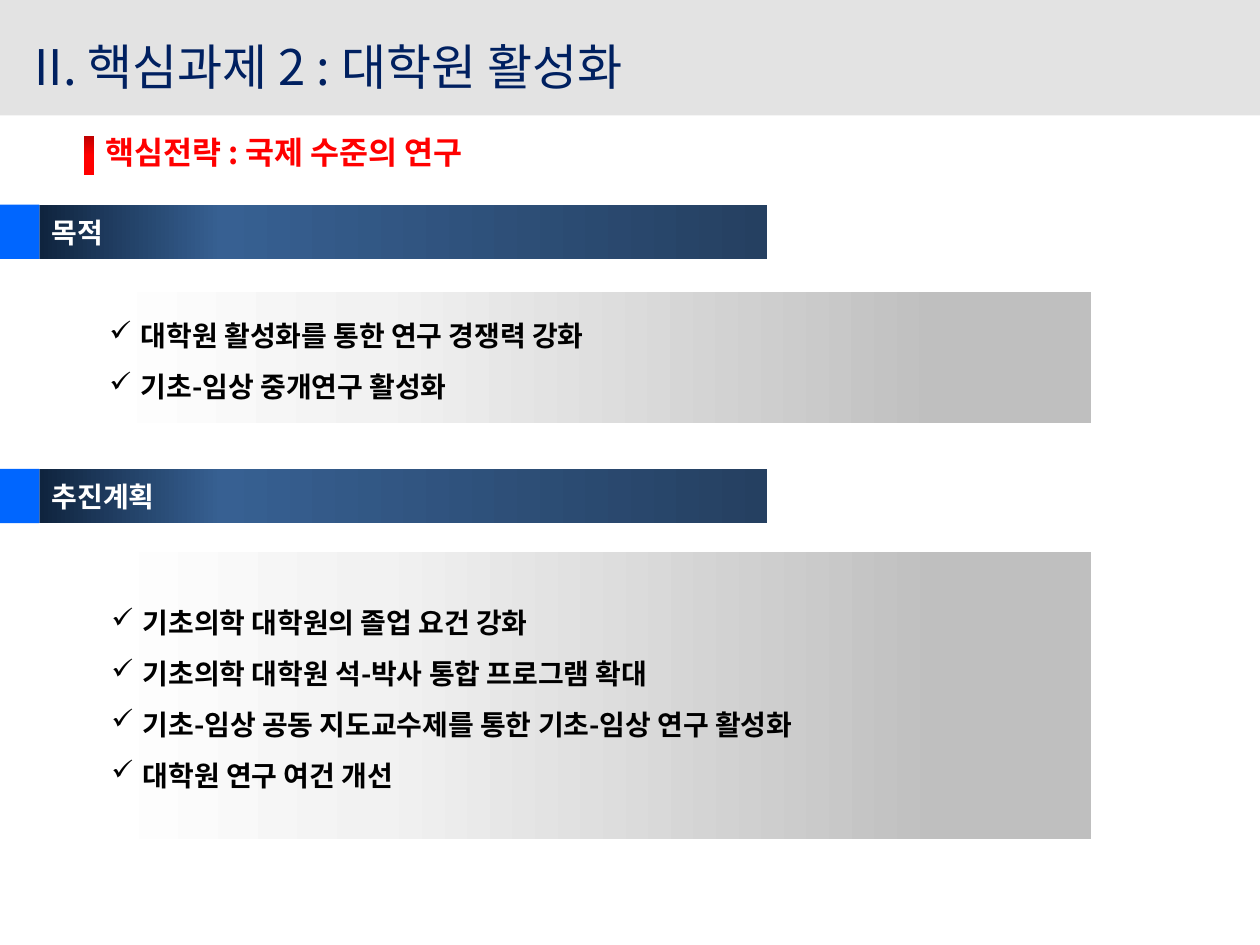
import pptx
import pptx.util
import pptx.dml.color
import pptx.enum.shapes
import pptx.enum.text
import pptx.oxml
import pptx.oxml.ns
from lxml import etree

Pt = pptx.util.Pt
RGB = pptx.dml.color.RGBColor
ALIGN = pptx.enum.text.PP_ALIGN
ANCHOR = pptx.enum.text.MSO_ANCHOR
qn = pptx.oxml.ns.qn

TITLE = "II. 핵심과제 2 : 대학원 활성화"
LEAD = "핵심전략 : 국제 수준의 연구"
# heading, heading top, panel (left, top, width, height), items
PARTS = [
    ("목적", 117, (55.5, 167, 568, 75), [
        "대학원 활성화를 통한 연구 경쟁력 강화",
        "기초-임상 중개연구 활성화",
    ]),
    ("추진계획", 268, (56.5, 315.5, 567, 164), [
        "기초의학 대학원의 졸업 요건 강화",
        "기초의학 대학원 석-박사 통합 프로그램 확대",
        "기초-임상 공동 지도교수제를 통한 기초-임상 연구 활성화",
        "대학원 연구 여건 개선",
    ]),
]

FONT = "Noto Sans CJK KR"
NAVY = RGB(0x00, 0x20, 0x60)
RED = RGB(0xFF, 0x00, 0x00)
BLUE = RGB(0x00, 0x66, 0xFF)
BLACK = RGB(0x00, 0x00, 0x00)
WHITE = RGB(0xFF, 0xFF, 0xFF)
SILVER = RGB(0xDD, 0xDD, 0xDD)
# gradient stops: percent, colour
GREYS = [(0, WHITE), (28, RGB(0xF2, 0xF2, 0xF2)), (85, RGB(0xBF, 0xBF, 0xBF))]
BLUES = [(0, RGB(0x0F, 0x24, 0x3E)), (25, RGB(0x37, 0x60, 0x92)),
         (100, RGB(0x25, 0x40, 0x61))]
REDS = [(0, RGB(0xC0, 0x00, 0x00)), (50, RED), (100, RED)]

TAB_W, HEAD_W, HEAD_H = 22.5, 416, 31
INDENT = 18


def add_rect(slide, box, color=None):
    shape = slide.shapes.add_shape(
        pptx.enum.shapes.MSO_SHAPE.RECTANGLE, *map(Pt, box))
    shape.shadow.inherit = False
    shape.line.fill.background()
    if color is not None:
        shape.fill.solid()
        shape.fill.fore_color.rgb = color
    return shape


def shade(shape, stops, angle=0):
    """Fill with a gradient; angle runs counter-clockwise."""
    shape.fill.gradient()
    shape.fill.gradient_angle = angle
    group = shape._element.spPr.find(qn("a:gradFill")).find(qn("a:gsLst"))
    for old in list(group):
        group.remove(old)
    for spot, color in stops:
        stop = etree.SubElement(group, qn("a:gs"), pos=str(spot * 1000))
        etree.SubElement(stop, qn("a:srgbClr"), val=str(color))


def add_run(para, text, size, color, bold=True):
    para.alignment = ALIGN.LEFT
    run = para.add_run()
    run.text = text
    font = run.font
    font.name, font.size, font.bold = FONT, Pt(size), bold
    font.color.rgb = color
    etree.SubElement(run._r.get_or_add_rPr(), qn("a:ea"), typeface=FONT)


def add_check(para):
    props = para._p.get_or_add_pPr()
    props.set("marL", str(Pt(INDENT)))
    props.set("indent", str(-Pt(INDENT)))
    etree.SubElement(props, qn("a:buChar"), char="✓")


def add_list(shape, items):
    frame = shape.text_frame
    frame.word_wrap = True
    frame.vertical_anchor = ANCHOR.MIDDLE
    for i, item in enumerate(items):
        para = frame.add_paragraph() if i else frame.paragraphs[0]
        para.line_spacing = 1.2
        para.space_after = Pt(6)
        add_check(para)
        add_run(para, item, 16, BLACK)


def add_head(slide, text, top):
    bar = add_rect(slide, (TAB_W, top, HEAD_W, HEAD_H))
    shade(bar, BLUES)
    bar.text_frame.vertical_anchor = ANCHOR.MIDDLE
    add_run(bar.text_frame.paragraphs[0], text, 16, WHITE)
    add_rect(slide, (0, top, TAB_W, HEAD_H), BLUE)


def add_title(slide):
    band = add_rect(slide, (0, 0, 720, 66), SILVER)
    color = band._element.spPr.find(qn("a:solidFill"))[0]
    etree.SubElement(color, qn("a:alpha"), val="80000")
    title = slide.shapes.title
    title._element.addprevious(band._element)
    title.left, title.top, title.width, title.height = map(
        Pt, (12.5, 16.5, 707.5, 42.5))
    frame = title.text_frame
    frame.word_wrap = True
    frame.vertical_anchor = ANCHOR.MIDDLE
    add_run(frame.paragraphs[0], TITLE, 28, NAVY, False)


def add_lead(slide):
    box = slide.shapes.add_textbox(*map(Pt, (53, 72.5, 510.5, 51)))
    box.text_frame.word_wrap = True
    add_run(box.text_frame.paragraphs[0], LEAD, 18, RED)
    shade(add_rect(slide, (48, 78, 6, 22)), REDS, 270)


def main():
    deck = pptx.Presentation()
    deck.slide_width, deck.slide_height = Pt(720), Pt(540)
    slide = deck.slides.add_slide(deck.slide_layouts[5])
    add_title(slide)
    for head, top, box, items in PARTS:
        panel = add_rect(slide, box)
        shade(panel, GREYS)
        add_list(panel, items)
        add_head(slide, head, top)
    add_lead(slide)
    deck.save("out.pptx")


if __name__ == "__main__":
    main()
